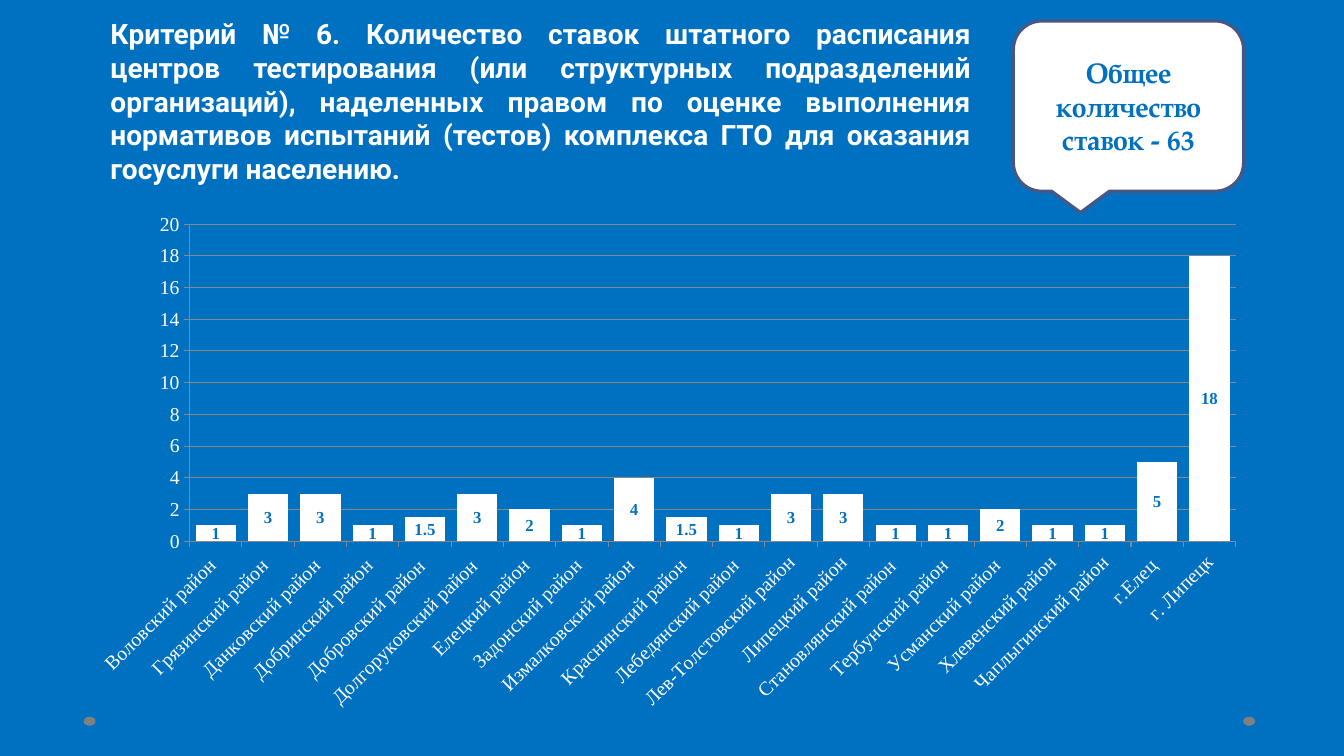
from lxml import etree
from pptx import Presentation
from pptx.chart.data import CategoryChartData
from pptx.dml.color import RGBColor
from pptx.enum.chart import XL_CHART_TYPE as ChartType, XL_LABEL_POSITION as LabelPosition
from pptx.enum.chart import XL_TICK_MARK as TickMark
from pptx.enum.shapes import MSO_SHAPE as Shape
from pptx.enum.text import MSO_ANCHOR as Anchor, MSO_AUTO_SIZE as AutoSize, PP_ALIGN as Align
from pptx.oxml.ns import qn
from pptx.util import Cm, Pt

COLORS = {
    "background": "0070C0",
    "light": "FFFFFF",
    "outline": "475785",
    "dot": "808080",
    "grid": "878787",
}

CRITERION = (
    "Критерий № 6. Количество ставок штатного расписания центров тестирования "
    "(или структурных подразделений организаций), наделенных правом по оценке "
    "выполнения нормативов испытаний (тестов) комплекса ГТО для оказания "
    "госуслуги населению."
)
TOTAL = "Общее количество ставок - 63"

POSITIONS = {
    "Воловский район ": 1,
    "Грязинский район ": 3,
    "Данковский район ": 3,
    "Добринский район ": 1,
    "Добровский район ": 1.5,
    "Долгоруковский район ": 3,
    "Елецкий район ": 2,
    "Задонский район ": 1,
    "Измалковский район ": 4,
    "Краснинский район ": 1.5,
    "Лебедянский район ": 1,
    "Лев-Толстовский район": 3,
    "Липецкий район": 3,
    "Становлянский район ": 1,
    "Тербунский район ": 1,
    "Усманский район ": 2,
    "Хлевенский район": 1,
    "Чаплыгинский район": 1,
    "г.Елец ": 5,
    "г. Липецк": 18,
}
CHART_WIDTH, CHART_HEIGHT = 29.79, 13.03
PLOT_AREA = {
    "x": 2.85 / CHART_WIDTH,
    "y": 0.52 / CHART_HEIGHT,
    "w": 26.36 / CHART_WIDTH,
    "h": 7.99 / CHART_HEIGHT,
}


def color(name):
    return RGBColor.from_string(COLORS[name])


def style_font(font, size, color_name, family, bold=False):
    font.size = Pt(size)
    font.bold = bold
    font.name = family
    font.color.rgb = color(color_name)


def write(frame, text, align, anchor, family, color_name):
    frame.text = text
    frame.word_wrap = True
    frame.auto_size = AutoSize.NONE
    frame.vertical_anchor = anchor
    paragraph = frame.paragraphs[0]
    paragraph.alignment = align
    paragraph.space_before = Pt(0)
    style_font(paragraph.runs[0].font, 20, color_name, family, bold=True)


def add_filled(slide, kind, box, fill):
    shape = slide.shapes.add_shape(kind, *map(Cm, box))
    shape.shadow.inherit = False
    shape.fill.solid()
    shape.fill.fore_color.rgb = color(fill)
    shape.line.fill.background()
    return shape


def add_criterion(slide):
    title = slide.shapes.title
    title.left, title.top, title.width, title.height = map(Cm, (2.53, 0.3, 22.2, 4.52))
    write(title.text_frame, CRITERION, Align.JUSTIFY, Anchor.TOP, "Roboto", "light")


def add_total(slide):
    callout = add_filled(slide, Shape.ROUNDED_RECTANGULAR_CALLOUT,
                         (25.54, 0.53, 5.8, 4.29), "light")
    callout.line.color.rgb = color("outline")
    callout.line.width = Pt(2.25)
    write(callout.text_frame, TOTAL, Align.CENTER, Anchor.MIDDLE,
          "TeX Gyre Pagella", "background")


def style_axis(axis):
    axis.major_tick_mark = TickMark.OUTSIDE
    axis.minor_tick_mark = TickMark.NONE
    axis.format.line.color.rgb = color("grid")
    style_font(axis.tick_labels.font, 14, "light", "Times New Roman")


def fix_plot_area(chart):
    """Pin the inner plot area and slant the category labels by 45 degrees."""
    plot_area = chart.element.xpath("c:chart/c:plotArea")[0]
    for old_layout in plot_area.findall(qn("c:layout")):
        plot_area.remove(old_layout)
    layout = etree.Element(qn("c:layout"))
    manual = etree.SubElement(layout, qn("c:manualLayout"))
    settings = {"layoutTarget": "inner", "xMode": "edge", "yMode": "edge", **PLOT_AREA}
    for tag, value in settings.items():
        etree.SubElement(manual, qn(f"c:{tag}")).set("val", str(value))
    plot_area.insert(0, layout)
    plot_area.xpath("c:catAx/c:txPr/a:bodyPr")[0].set("rot", "-2700000")


def add_positions_chart(slide):
    data = CategoryChartData()
    data.categories = list(POSITIONS)
    data.add_series("Series 1", list(POSITIONS.values()))
    box = map(Cm, (1.93, 5.13, CHART_WIDTH, CHART_HEIGHT))
    chart = slide.shapes.add_chart(ChartType.COLUMN_STACKED, *box, data).chart
    chart.has_legend = False
    chart.has_title = False
    chart.font.size = Pt(14)
    chart.font.name = "Times New Roman"

    style_axis(chart.category_axis)
    scale = chart.value_axis
    style_axis(scale)
    scale.minimum_scale, scale.maximum_scale, scale.major_unit = 0, 20, 2
    scale.has_major_gridlines = True
    scale.major_gridlines.format.line.color.rgb = color("grid")

    columns = chart.plots[0]
    columns.gap_width = 30
    columns.overlap = 100
    columns.vary_by_categories = False
    districts = columns.series[0]
    districts.format.fill.solid()
    districts.format.fill.fore_color.rgb = color("light")
    labels = districts.data_labels
    labels.show_value = True
    labels.position = LabelPosition.CENTER
    style_font(labels.font, 12, "background", "Times New Roman", bold=True)
    fix_plot_area(chart)


def main():
    deck = Presentation()
    deck.slide_width, deck.slide_height = Cm(33.87), Cm(19.05)
    slide = deck.slides.add_slide(deck.slide_layouts[5])
    slide.background.fill.solid()
    slide.background.fill.fore_color.rgb = color("background")

    for left in (2.11, 31.33):
        add_filled(slide, Shape.OVAL, (left, 18.06, 0.3, 0.23), "dot")
    add_positions_chart(slide)
    add_criterion(slide)
    add_total(slide)
    deck.save("out.pptx")


if __name__ == "__main__":
    main()
